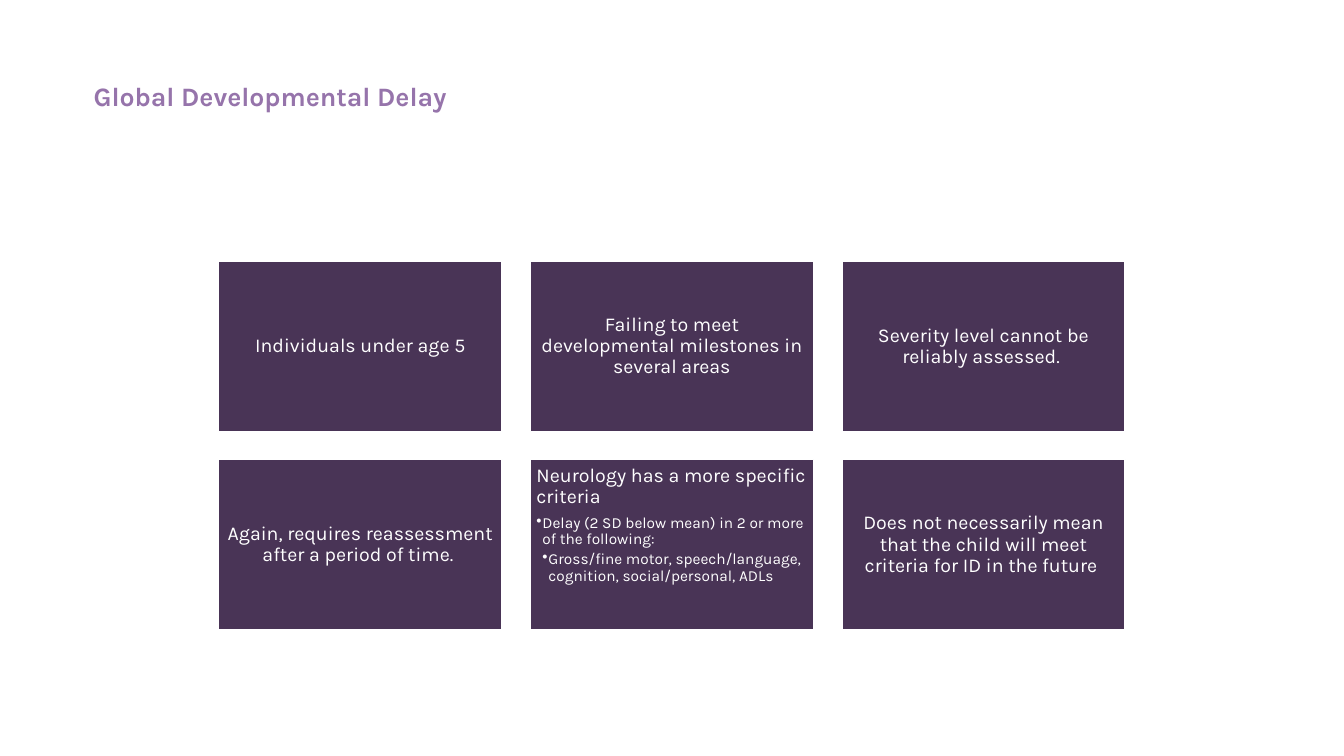
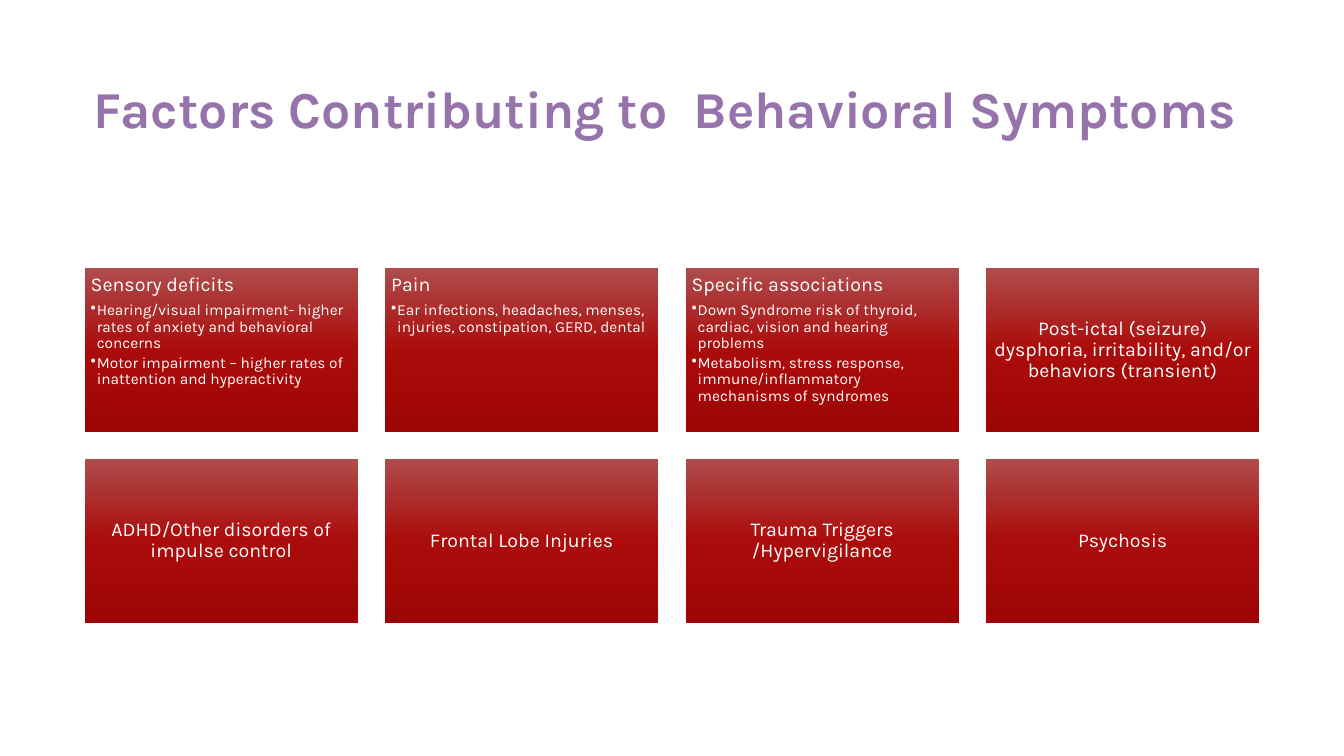
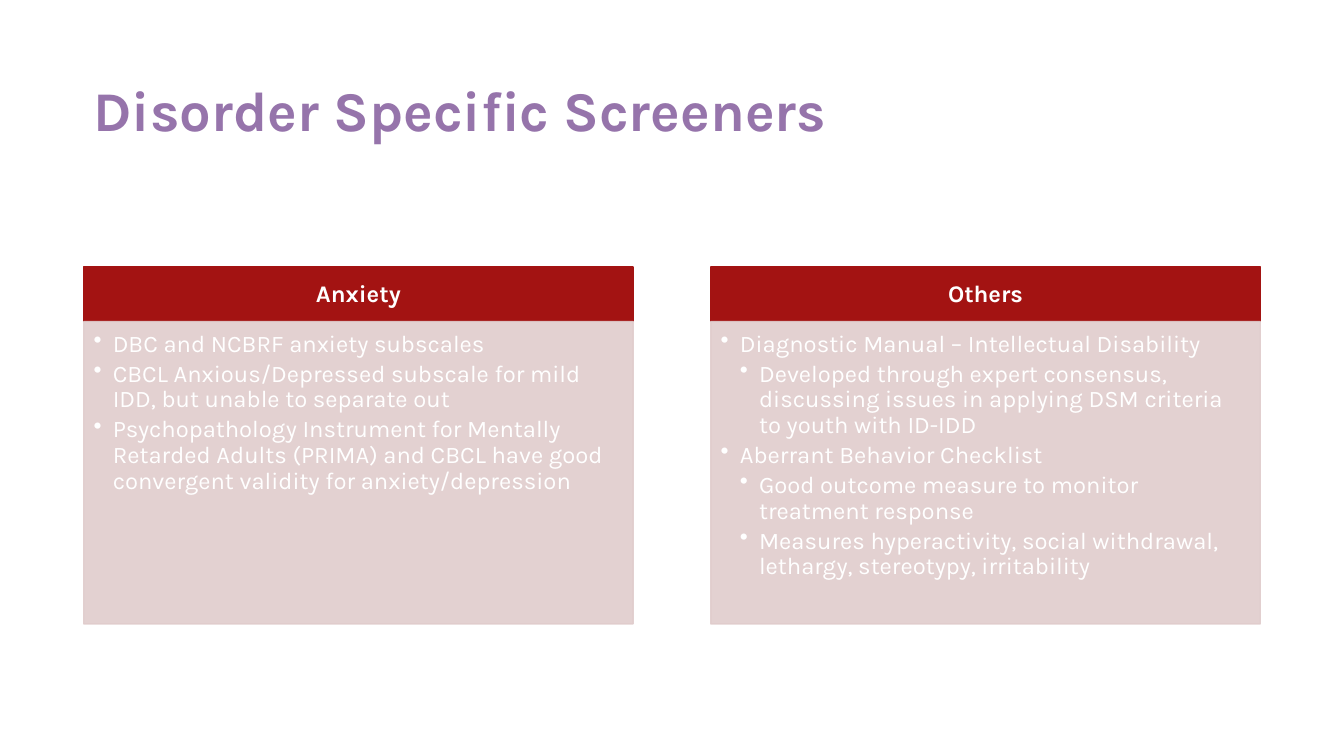
from copy import deepcopy

from lxml.etree import SubElement
from pptx import Presentation
from pptx.dml.color import RGBColor
from pptx.enum.shapes import MSO_SHAPE as SHAPE
from pptx.enum.text import MSO_ANCHOR as ANCHOR, PP_ALIGN as ALIGN
from pptx.oxml.ns import qn
from pptx.util import Inches, Pt

FONT = "Karla"
WHITE = RGBColor(0xFF, 0xFF, 0xFF)
LILAC = RGBColor(0x96, 0x74, 0xAB)
PLUM = RGBColor(0x49, 0x34, 0x56)
RED = RGBColor(0xA3, 0x13, 0x12)
ROSE = RGBColor(0xE0, 0xCC, 0xCC)
RED_BLEND = [
    (0, RGBColor(0xAF, 0x4C, 0x4C)),
    (0.5, RGBColor(0xAA, 0x0C, 0x0B)),
    (1, RGBColor(0x9E, 0x04, 0x03)),
]

CARD = {"margins": (0.06, 0.06, 0.06, 0.06), "sizes": (14, 11, 11), "after": (5, 2, 2), "indent": 0.06}
PLUM_CARD = {**CARD, "fill": PLUM, "line": WHITE}
RED_CARD = {**CARD, "blend": RED_BLEND}
HEADER = {"margins": (0.13, 0.08, 0.13, 0.08), "sizes": (17,), "after": (5,), "bold": True,
          "fill": RED, "line": RED}
PANEL = {"margins": (0.1, 0.1, 0.13, 0.15), "sizes": (17, 17, 17), "after": (3, 3, 3), "indent": 0.19,
         "fill": ROSE, "line": ROSE, "alpha": 90}

deck = Presentation()
deck.slide_width, deck.slide_height = Inches(13.33), Inches(7.5)


def add_text(frame, lines, style):
    frame.word_wrap = True
    sides = ("margin_left", "margin_top", "margin_right", "margin_bottom")
    for side, margin in zip(sides, style["margins"]):
        setattr(frame, side, Inches(margin))
    centered = style.get("centered", True) and all(level == 0 for level, text in lines)
    frame.vertical_anchor = ANCHOR.MIDDLE if centered else ANCHOR.TOP
    for number, (level, text) in enumerate(lines):
        para = frame.add_paragraph() if number else frame.paragraphs[0]
        layout = {
            "alignment": ALIGN.CENTER if centered else ALIGN.LEFT,
            "level": level,
            "line_spacing": 0.9,
            "space_after": Pt(style["after"][level]),
        }
        for name, value in layout.items():
            setattr(para, name, value)
        if level:
            properties = para._p.get_or_add_pPr()
            properties.set("marL", str(Inches(style["indent"] * level)))
            properties.set("indent", str(-Inches(style["indent"])))
            SubElement(properties, qn("a:buChar")).set("char", "•")
        span = para.add_run()
        span.text = text
        look = {"name": FONT, "size": Pt(style["sizes"][level]), "bold": style.get("bold", False)}
        for name, value in look.items():
            setattr(span.font, name, value)
        span.font.color.rgb = style.get("color", WHITE)


def add_block(page, left, top, width, height, style, lines):
    block = page.shapes.add_shape(SHAPE.RECTANGLE, Inches(left), Inches(top), Inches(width), Inches(height))
    block.shadow.inherit = False
    if "blend" in style:
        block.fill.gradient()
        block.fill.gradient_angle = 270
        stops = block.fill._xPr.find(".//" + qn("a:gsLst"))
        stops.insert(1, deepcopy(stops[0]))
        for stop, (position, color) in zip(block.fill.gradient_stops, style["blend"]):
            stop.position = position
            stop.color.rgb = color
    else:
        block.fill.solid()
        block.fill.fore_color.rgb = style["fill"]
    if "line" in style:
        block.line.color.rgb = style["line"]
        block.line.width = Pt(1)
    else:
        block.line.fill.background()
    if "alpha" in style:
        for color in block._element.spPr.iter(qn("a:srgbClr")):
            SubElement(color, qn("a:alpha")).set("val", str(style["alpha"] * 1000))
    add_text(block.text_frame, lines, style)


pages = []
for title, size in [
    ("Global Developmental Delay", 19),
    ("Factors Contributing to  Behavioral Symptoms", 37),
    ("Disorder Specific Screeners", 40),
]:
    page = deck.slides.add_slide(deck.slide_layouts[6])
    heading = page.shapes.add_textbox(Inches(0.83), Inches(0.78), Inches(11.58), Inches(0.71))
    title_style = {"margins": (0.1, 0.05, 0.1, 0.05), "sizes": (size,), "after": (0,),
                   "bold": True, "color": LILAC, "centered": False}
    add_text(heading.text_frame, [(0, title)], title_style)
    pages.append(page)
delay_page, factors_page, screeners_page = pages

delay_cards = [
    [(0, "Individuals under age 5")],
    [(0, "Failing to meet developmental milestones in several areas")],
    [(0, "Severity level cannot be reliably assessed. ")],
    [(0, "Again, requires reassessment after a period of time. ")],
    [
        (0, "Neurology has a more specific criteria"),
        (1, "Delay (2 SD below mean) in 2 or more of the following:"),
        (2, "Gross/fine motor, speech/language, cognition, social/personal, ADLs"),
    ],
    [(0, "Does not necessarily mean that the child will meet criteria for ID in the future ")],
]
for number, lines in enumerate(delay_cards):
    row, column = divmod(number, 3)
    add_block(delay_page, 2.17 + 3.09 * column, 2.59 + 1.97 * row, 2.81, 1.69, PLUM_CARD, lines)

factor_cards = [
    [
        (0, "Sensory deficits"),
        (1, "Hearing/visual impairment- higher rates of anxiety and behavioral concerns"),
        (1, "Motor impairment – higher rates of inattention and hyperactivity"),
    ],
    [
        (0, "Pain"),
        (1, "Ear infections, headaches, menses, injuries, constipation, GERD, dental"),
    ],
    [
        (0, "Specific associations"),
        (1, "Down Syndrome risk of thyroid, cardiac, vision and hearing problems"),
        (1, "Metabolism, stress response, immune/inflammatory mechanisms of syndromes"),
    ],
    [(0, "Post-ictal (seizure) dysphoria, irritability, and/or behaviors (transient)")],
    [(0, "ADHD/Other disorders of impulse control")],
    [(0, "Frontal Lobe Injuries")],
    [(0, "Trauma Triggers /Hypervigilance")],
    [(0, "Psychosis")],
]
for number, lines in enumerate(factor_cards):
    row, column = divmod(number, 4)
    add_block(factors_page, 0.84 + 2.98 * column, 2.66 + 1.89 * row, 2.71, 1.63, RED_CARD, lines)

screener_columns = [
    ("Anxiety", [
        (1, "DBC and NCBRF anxiety subscales"),
        (1, "CBCL Anxious/Depressed subscale for mild IDD, but unable to separate out"),
        (1, "Psychopathology Instrument for Mentally Retarded Adults (PRIMA) and CBCL have good "
            "convergent validity for anxiety/depression"),
    ]),
    ("Others", [
        (1, "Diagnostic Manual – Intellectual Disability"),
        (2, "Developed through expert consensus, discussing issues in applying DSM criteria "
            "to youth with ID-IDD"),
        (1, "Aberrant Behavior Checklist"),
        (2, "Good outcome measure to monitor treatment response"),
        (2, "Measures hyperactivity, social withdrawal, lethargy, stereotypy, irritability"),
    ]),
]
for column, (name, lines) in enumerate(screener_columns):
    left = 0.83 + 6.22 * column
    add_block(screeners_page, left, 2.65, 5.45, 0.54, HEADER, [(0, name)])
    add_block(screeners_page, left, 3.19, 5.45, 3, PANEL, lines)

deck.save("out.pptx")
